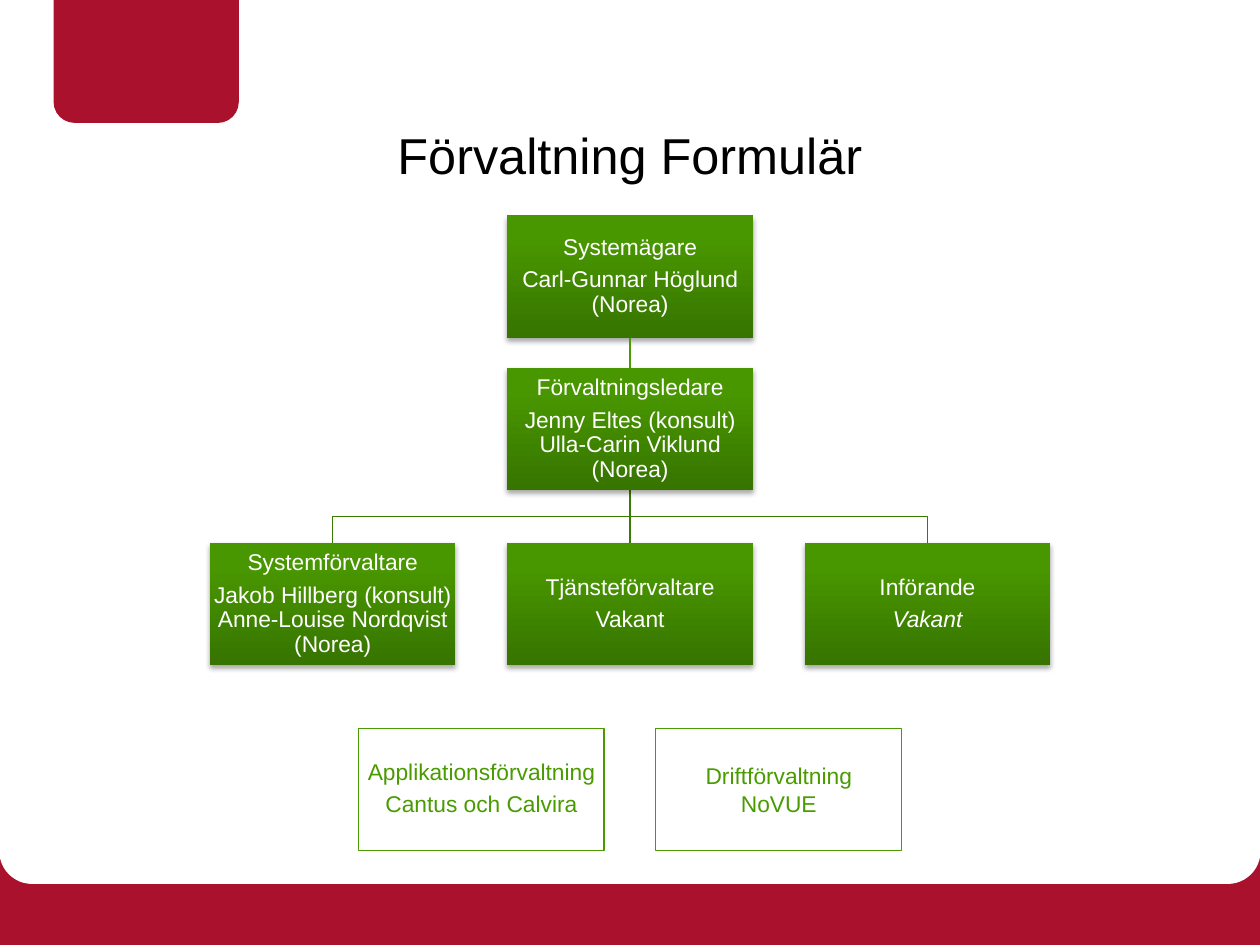
import pptx
import pptx.dml.color
import pptx.enum.shapes
import pptx.enum.text
import pptx.oxml
import pptx.oxml.ns
import pptx.util
from pptx.util import Inches, Pt

SHAPES = pptx.enum.shapes.MSO_SHAPE
ALIGN = pptx.enum.text.PP_ALIGN
MIDDLE = pptx.enum.text.MSO_ANCHOR.MIDDLE

TITLE = "Förvaltning Formulär"
RED, WHITE, BLACK = "AA112C", "FFFFFF", "000000"
GREEN, DARK_GREEN, GRADIENT = "4A9B00", "3B7C00", ("377400", "489600")
FONT = "Arial"

CENTER, COLUMN_PITCH = 5, 2.36
BOX_WIDTH, BOX_HEIGHT = 1.95, 0.97
OWNER_TOP, LEADER_TOP, TEAM_TOP, SUPPLIER_TOP = 1.71, 2.92, 4.31, 5.78

# Column offset from the centre, top, role, holder, italic holder
ROLES = [
    (0, OWNER_TOP, "Systemägare", "Carl-Gunnar Höglund (Norea)", False),
    (0, LEADER_TOP, "Förvaltningsledare",
     "Jenny Eltes (konsult)\nUlla-Carin Viklund (Norea)", False),
    (-1, TEAM_TOP, "Systemförvaltare",
     "Jakob Hillberg (konsult)\nAnne-Louise Nordqvist (Norea)", False),
    (0, TEAM_TOP, "Tjänsteförvaltare", "Vakant", False),
    (1, TEAM_TOP, "Införande", "Vakant", True),
]
# Column offset, service, supplier, line spacing, space after in points
SUPPLIERS = [
    (-0.5, "Applikationsförvaltning", "Cantus och Calvira", 0.9, 4.5),
    (0.5, "Driftförvaltning", "NoVUE", 1.0, 0),
]


def color(value):
    return pptx.dml.color.RGBColor.from_string(value)


def column_center(column):
    return CENTER + column * COLUMN_PITCH


def add_shape(slide, kind, left, top, width, height, fill=None, line=None):
    shape = slide.shapes.add_shape(
        kind, Inches(left), Inches(top), Inches(width), Inches(height))
    shape.shadow.inherit = False
    if fill:
        shape.fill.solid()
        shape.fill.fore_color.rgb = color(fill)
    else:
        shape.fill.background()
    if line:
        shape.line.color.rgb = color(line)
        shape.line.width = Pt(0.75)
    else:
        shape.line.fill.background()
    return shape


def add_box(slide, column, top, line=None):
    return add_shape(slide, SHAPES.RECTANGLE, column_center(column) - BOX_WIDTH / 2,
                     top, BOX_WIDTH, BOX_HEIGHT, line=line)


def write_lines(shape, lines, text_color, spacing=0.9, after=4.5):
    frame = shape.text_frame
    frame.word_wrap = True
    frame.vertical_anchor = MIDDLE
    frame.margin_left = frame.margin_right = Inches(0.01)
    frame.margin_top = frame.margin_bottom = Inches(0.01)
    for index, line in enumerate(lines):
        paragraph = frame.paragraphs[0] if index == 0 else frame.add_paragraph()
        paragraph.text = line
        paragraph.alignment = ALIGN.CENTER
        paragraph.line_spacing = spacing
        paragraph.space_after = Pt(after)
        for run in paragraph.runs:
            run.font.name = FONT
            run.font.size = Pt(13)
            run.font.color.rgb = color(text_color)


def shade_box(shape):
    """Give a box its vertical green gradient and soft shadow below."""
    shape.fill.gradient()
    shape.fill.gradient_angle = 90
    for stop, value, position in zip(shape.fill.gradient_stops, GRADIENT, (0, 0.8)):
        stop.color.rgb = color(value)
        stop.position = position
    effects = shape._element.spPr.find(pptx.oxml.ns.qn("a:effectLst"))
    effects.append(pptx.oxml.parse_xml(
        f'<a:outerShdw {pptx.oxml.ns.nsdecls("a")} blurRad="{Pt(3.1)}" '
        f'dist="{Pt(1.8)}" dir="5400000" rotWithShape="0">'
        f'<a:srgbClr val="{BLACK}"><a:alpha val="35000"/></a:srgbClr></a:outerShdw>'))


def add_line(slide, top, bottom, line_color, width):
    connector = slide.shapes.add_connector(
        pptx.enum.shapes.MSO_CONNECTOR.STRAIGHT,
        Inches(CENTER), Inches(top), Inches(CENTER), Inches(bottom))
    connector.line.color.rgb = color(line_color)
    connector.line.width = Pt(width)
    connector._element.spPr.append(
        pptx.oxml.parse_xml(f'<a:effectLst {pptx.oxml.ns.nsdecls("a")}/>'))


def add_branch(slide, column):
    """Draw an elbow from the leader box to a team box at the side."""
    start = LEADER_TOP + BOX_HEIGHT
    middle = (start + TEAM_TOP) / 2
    end = column_center(column)
    builder = slide.shapes.build_freeform(Inches(CENTER), Inches(start))
    corners = [(CENTER, middle), (end, middle), (end, TEAM_TOP)]
    builder.add_line_segments([(Inches(x), Inches(y)) for x, y in corners], close=False)
    branch = builder.convert_to_shape()
    branch.shadow.inherit = False
    branch.fill.background()
    branch.line.color.rgb = color(DARK_GREEN)
    branch.line.width = Pt(0.75)


def add_frame(slide):
    add_shape(slide, SHAPES.RECTANGLE, 0, 6.68, 10, 0.82, RED)
    panel = add_shape(slide, SHAPES.ROUNDED_RECTANGLE, 0, 6.32, 10, 0.69, WHITE, WHITE)
    panel.adjustments[0] = 0.37
    tab = add_shape(slide, SHAPES.ROUND_2_SAME_RECTANGLE, 0.43, 0, 1.46, 0.97, RED, RED)
    tab.rotation = 180


def add_title(slide):
    title = slide.shapes.title
    title.left, title.top = Inches(0.5), Inches(0.96)
    title.width, title.height = Inches(9), Inches(0.53)
    title.text_frame.text = TITLE
    title.text_frame.vertical_anchor = MIDDLE
    paragraph = title.text_frame.paragraphs[0]
    paragraph.alignment = ALIGN.CENTER
    font = paragraph.runs[0].font
    font.name, font.size = FONT, Pt(28.8)
    font.color.rgb = color(BLACK)


def main():
    presentation = pptx.Presentation()
    presentation.slide_width, presentation.slide_height = Inches(10), Inches(7.5)
    slide = presentation.slides.add_slide(presentation.slide_layouts[5])
    add_frame(slide)
    add_title(slide)
    for column in (-1, 1):
        add_branch(slide, column)
    add_line(slide, LEADER_TOP + BOX_HEIGHT, TEAM_TOP, DARK_GREEN, 0.75)
    for column, top, role, holder, italic in ROLES:
        box = add_box(slide, column, top)
        shade_box(box)
        write_lines(box, [role, holder], WHITE)
        if italic:
            box.text_frame.paragraphs[1].runs[0].font.italic = True
    for column, service, supplier, spacing, after in SUPPLIERS:
        box = add_box(slide, column, SUPPLIER_TOP, line=GREEN)
        write_lines(box, [service, supplier], GREEN, spacing, after)
    add_line(slide, OWNER_TOP + BOX_HEIGHT, LEADER_TOP, GREEN, 1)
    presentation.save("out.pptx")


if __name__ == "__main__":
    main()
